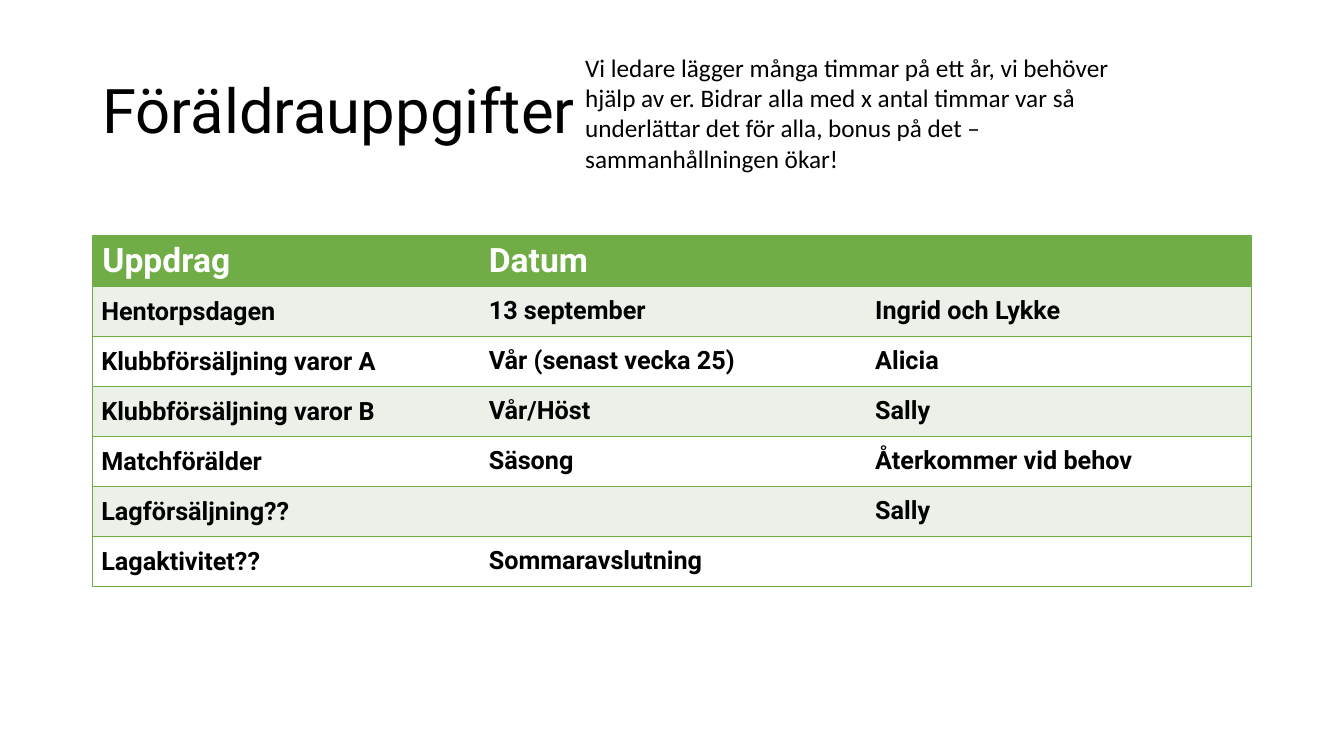
from lxml import etree
from pptx import Presentation
from pptx.dml.color import RGBColor
from pptx.enum import text as t
from pptx.oxml import ns
from pptx.util import Pt

GREEN = RGBColor(0x70, 0xAD, 0x47)
PALE_GREEN = RGBColor(0xEB, 0xF1, 0xE9)
WHITE = RGBColor(0xFF, 0xFF, 0xFF)
BLACK = RGBColor(0x00, 0x00, 0x00)

TASKS = [
    ("Uppdrag", "Datum", ""),
    ("Hentorpsdagen", "13 september", "Ingrid och Lykke"),
    ("Klubbförsäljning varor A", "Vår (senast vecka 25)", "Alicia"),
    ("Klubbförsäljning varor B", "Vår/Höst", "Sally"),
    ("Matchförälder", "Säsong", "Återkommer vid behov"),
    ("Lagförsäljning??", "", "Sally"),
    ("Lagaktivitet??", "Sommaravslutning", ""),
]
APPEAL = (
    "Vi ledare lägger många timmar på ett år, vi behöver hjälp av er. "
    "Bidrar alla med x antal timmar var så underlättar det för alla, "
    "bonus på det – sammanhållningen ökar!"
)


def write_text(frame, content, size=18, font="Roboto", color=BLACK, bold=False, spacing=None):
    paragraph = frame.paragraphs[0]
    paragraph.alignment = t.PP_ALIGN.LEFT
    paragraph.line_spacing = spacing
    run = paragraph.add_run()
    run.text = content
    run.font.size = Pt(size)
    run.font.name = font
    run.font.color.rgb = color
    run.font.bold = bold
    return paragraph


class SlideBuilder:
    def __init__(self, presentation):
        self.slide = presentation.slides.add_slide(presentation.slide_layouts[5])

    def title(self, content, left, top, width, height):
        shape = self.slide.shapes.title
        shape.left, shape.top, shape.width, shape.height = map(Pt, (left, top, width, height))
        frame = shape.text_frame
        frame.auto_size = t.MSO_AUTO_SIZE.NONE
        frame.vertical_anchor = t.MSO_ANCHOR.MIDDLE
        write_text(frame, content, size=44, spacing=0.9)

    def text_box(self, content, left, top, width, height):
        shape = self.slide.shapes.add_textbox(*map(Pt, (left, top, width, height)))
        frame = shape.text_frame
        frame.word_wrap = True
        frame.auto_size = t.MSO_AUTO_SIZE.SHAPE_TO_FIT_TEXT
        write_text(frame, content, font="Calibri")

    def table(self, rows, left, top, width, height):
        shape = self.slide.shapes.add_table(
            len(rows), len(rows[0]), *map(Pt, (left, top, width, height)))
        last = len(rows[0]) - 1
        for row, values in enumerate(rows):
            for column, value in enumerate(values):
                cell = shape.table.cell(row, column)
                cell.vertical_anchor = t.MSO_ANCHOR.MIDDLE
                header = row == 0
                cell.fill.solid()
                cell.fill.fore_color.rgb = GREEN if header else PALE_GREEN if row % 2 else WHITE
                self.borders(cell, L=column == 0, R=column == last, T=True, B=True)
                if not value:
                    continue
                paragraph = write_text(cell.text_frame, value, bold=True,
                                       size=24 if header else 18,
                                       color=WHITE if header else BLACK)
                # Task names have narrow margins and an indent
                if column == 0 and not header:
                    cell.margin_left = cell.margin_right = cell.margin_top = Pt(0.75)
                    cell.margin_bottom = 0
                    paragraph._p.get_or_add_pPr().set("marL", str(Pt(5.65)))

    def borders(self, cell, **sides):
        properties = cell._tc.get_or_add_tcPr()
        for position, (side, visible) in enumerate(sides.items()):
            line = etree.Element(ns.qn(f"a:ln{side}"), w=str(Pt(1)))
            if visible:
                fill = etree.SubElement(line, ns.qn("a:solidFill"))
                etree.SubElement(fill, ns.qn("a:srgbClr"), val=str(GREEN))
            else:
                etree.SubElement(line, ns.qn("a:noFill"))
            properties.insert(position, line)


def main():
    presentation = Presentation()
    presentation.slide_width, presentation.slide_height = Pt(960), Pt(540)
    builder = SlideBuilder(presentation)

    # Heading and appeal to the parents
    builder.title("Föräldrauppgifter", 66, 28.75, 828, 104.4)
    builder.text_box(APPEAL, 410.9, 33.7, 420, 94.5)

    # Task schedule
    builder.table(TASKS, 66, 168.4, 828, 250.3)

    presentation.save("out.pptx")


if __name__ == "__main__":
    main()
